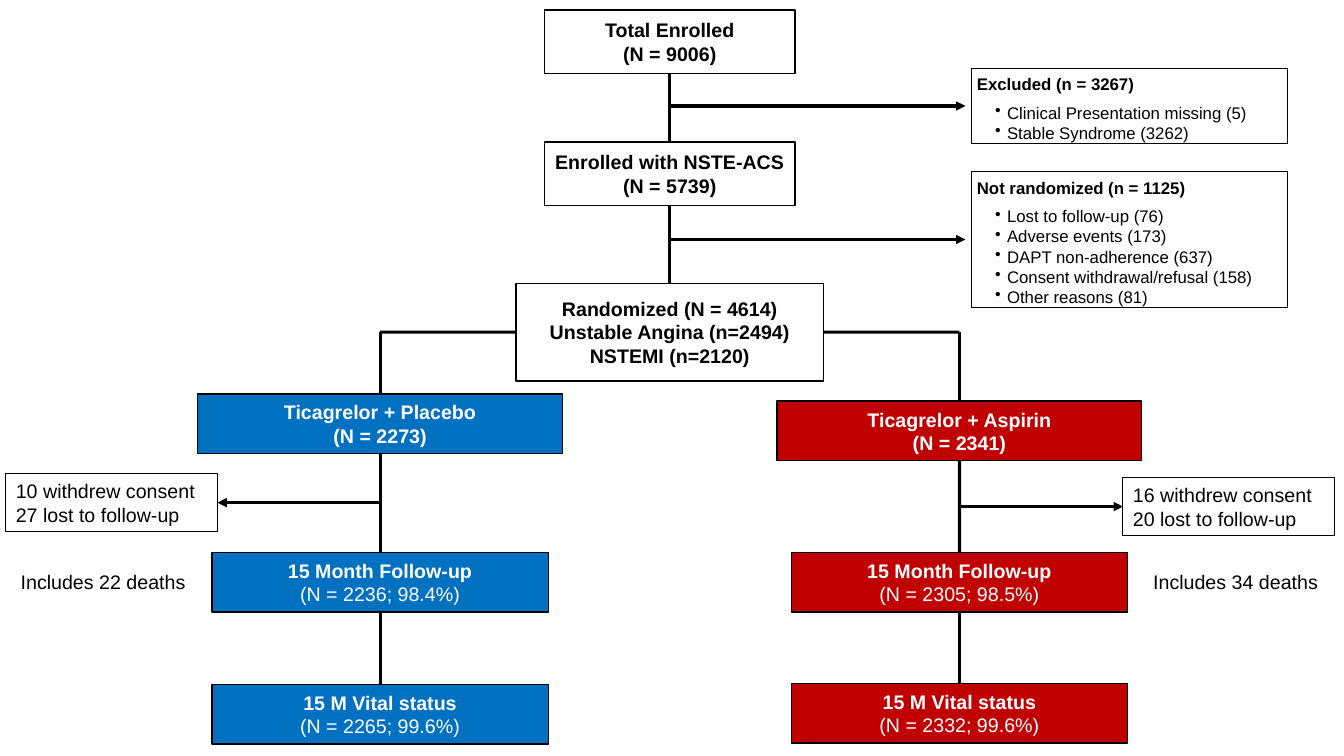
from dataclasses import dataclass
from typing import Optional

from lxml import etree
from pptx import Presentation
from pptx.dml.color import RGBColor
from pptx.enum.shapes import MSO_CONNECTOR, MSO_SHAPE
from pptx.enum.text import MSO_ANCHOR, PP_ALIGN
from pptx.oxml.ns import qn
from pptx.util import Cm, Pt

RECTANGLE = MSO_SHAPE.RECTANGLE
STRAIGHT = MSO_CONNECTOR.STRAIGHT
TOP, MIDDLE = MSO_ANCHOR.TOP, MSO_ANCHOR.MIDDLE
LEFT, CENTER = PP_ALIGN.LEFT, PP_ALIGN.CENTER
SITE_TOP, SITE_LEFT, SITE_BOTTOM, SITE_RIGHT = range(4)


@dataclass(frozen=True)
class Theme:
    font: str = "Arial"
    black: RGBColor = RGBColor(0x00, 0x00, 0x00)
    white: RGBColor = RGBColor(0xFF, 0xFF, 0xFF)
    blue: RGBColor = RGBColor(0x00, 0x70, 0xC0)
    red: RGBColor = RGBColor(0xC0, 0x00, 0x00)
    body_size: float = 14
    list_size: float = 12
    thin_line: float = 0.75
    box_line: float = 1
    flow_line: float = 2.25


THEME = Theme()


@dataclass(frozen=True)
class TextLine:
    text: str
    bold: bool = False
    bullet: bool = False
    space_after: float = 0


@dataclass(frozen=True)
class Box:
    """A text rectangle; lengths in cm, insets as left, top, right, bottom."""
    left: float
    top: float
    width: float
    height: float
    lines: list[TextLine]
    fill: Optional[RGBColor] = None
    color: RGBColor = THEME.black
    line_width: float = THEME.box_line
    size: float = THEME.body_size
    align: PP_ALIGN = CENTER
    anchor: MSO_ANCHOR = MIDDLE
    insets: tuple[float, float, float, float] = (0, 0.13, 0, 0.13)

    @property
    def middle(self) -> float:
        return self.top + self.height / 2


@dataclass(frozen=True)
class Arm:
    center: float
    color: RGBColor
    site: int
    tops: tuple[float, float, float]
    names: tuple[str, str, str]
    counts: tuple[str, str, str]
    losses: tuple[str, str]
    losses_left: float
    losses_top: float
    losses_site: int
    deaths: str
    deaths_left: float


TRUNK = 16.88
TRUNK_STEPS = [
    (0.25, 6.32, 1.6, ["Total Enrolled", "(N = 9006)"]),
    (3.58, 6.32, 1.6, ["Enrolled with NSTE-ACS", "(N = 5739)"]),
    (7.14, 7.75, 2.46, ["Randomized (N = 4614)", "Unstable Angina (n=2494)", "NSTEMI (n=2120)"]),
]
SIDE_LISTS = [
    (1.73, 1.88, "Excluded (n = 3267)",
     ["Clinical Presentation missing (5)", "Stable Syndrome (3262)"]),
    (4.32, 3.43, "Not randomized (n = 1125)",
     ["Lost to follow-up (76)", "Adverse events (173)", "DAPT non-adherence (637)",
      "Consent withdrawal/refusal (158)", "Other reasons (81)"]),
]
STEP_NAMES = ("15 Month Follow-up", "15 M Vital status")
ARM_WIDTHS = (9.19, 8.48, 8.48)
ARMS = [
    Arm(9.58, THEME.blue, SITE_LEFT, (9.93, 13.92, 17.25),
        ("Ticagrelor + Placebo", *STEP_NAMES),
        ("(N = 2273)", "(N = 2236; 98.4%)", "(N = 2265; 99.6%)"),
        ("10 withdrew consent", "27 lost to follow-up"), 0.15, 11.94, SITE_RIGHT,
        "Includes 22 deaths", 0),
    Arm(24.18, THEME.red, SITE_RIGHT, (10.11, 13.92, 17.22),
        ("Ticagrelor + Aspirin", *STEP_NAMES),
        ("(N = 2341)", "(N = 2305; 98.5%)", "(N = 2332; 99.6%)"),
        ("16 withdrew consent", "20 lost to follow-up"), 28.3, 12.04, SITE_LEFT,
        "Includes 34 deaths", 28.54),
]


def set_values(target, values: dict) -> None:
    for name, value in values.items():
        setattr(target, name, value)


def add_bullet(paragraph) -> None:
    properties = paragraph._p.get_or_add_pPr()
    properties.set("marL", str(Cm(0.76)))
    properties.set("indent", str(Cm(-0.3)))
    etree.SubElement(properties, qn("a:buChar")).set("char", "•")


def write_text(frame, box: Box) -> None:
    left, top, right, bottom = box.insets
    set_values(frame, {
        "word_wrap": True, "vertical_anchor": box.anchor,
        "margin_left": Cm(left), "margin_top": Cm(top),
        "margin_right": Cm(right), "margin_bottom": Cm(bottom),
    })
    for index, line in enumerate(box.lines):
        paragraph = frame.add_paragraph() if index else frame.paragraphs[0]
        set_values(paragraph, {"alignment": box.align, "space_after": Pt(line.space_after)})
        if line.bullet:
            add_bullet(paragraph)
        run = paragraph.add_run()
        run.text = line.text
        set_values(run.font, {"name": THEME.font, "size": Pt(box.size), "bold": line.bold})
        run.font.color.rgb = box.color


def draw_box(slide, box: Box):
    shape = slide.shapes.add_shape(
        RECTANGLE, Cm(box.left), Cm(box.top), Cm(box.width), Cm(box.height))
    shape.shadow.inherit = False
    if box.fill is None:
        shape.fill.background()
    else:
        shape.fill.solid()
        shape.fill.fore_color.rgb = box.fill
    shape.line.color.rgb = THEME.black
    shape.line.width = Pt(box.line_width)
    write_text(shape.text_frame, box)
    return shape


def draw_label(slide, box: Box) -> None:
    label = slide.shapes.add_textbox(
        Cm(box.left), Cm(box.top), Cm(box.width), Cm(box.height))
    write_text(label.text_frame, box)


def draw_line(slide, start: tuple[float, float], end: tuple[float, float],
              begin_join=None, end_join=None, arrow: bool = False) -> None:
    """Draw a flow line; each join is a (shape, connection site) pair."""
    connector = slide.shapes.add_connector(STRAIGHT, *(Cm(value) for value in start + end))
    connector.line.color.rgb = THEME.black
    connector.line.width = Pt(THEME.flow_line)
    if arrow:
        etree.SubElement(connector.line._get_or_add_ln(), qn("a:tailEnd")).set("type", "triangle")
    etree.SubElement(connector._element.spPr, qn("a:effectLst"))
    if begin_join:
        connector.begin_connect(*begin_join)
    if end_join:
        connector.end_connect(*end_join)


def draw_chain(slide, center: float, boxes: list[Box]) -> list:
    """Draw boxes from top to bottom, each joined to the next."""
    shapes = [draw_box(slide, box) for box in boxes]
    for index in range(len(boxes) - 1):
        upper, lower = boxes[index:index + 2]
        draw_line(slide, (center, upper.top + upper.height), (center, lower.top),
                  (shapes[index], SITE_BOTTOM), (shapes[index + 1], SITE_TOP))
    return shapes


def draw_side_list(slide, top: float, height: float, title: str, items: list[str]) -> None:
    lines = [TextLine(title, bold=True, space_after=6)]
    lines += [TextLine(item, bullet=True) for item in items]
    box = Box(24.49, top, 7.95, height, lines, line_width=THEME.thin_line,
              size=THEME.list_size, align=LEFT, insets=(0.13, 0.13, 0, 0))
    draw_box(slide, box)
    draw_line(slide, (TRUNK, box.middle), (box.left - 0.16, box.middle), arrow=True)


def draw_arm(slide, arm: Arm, randomized: Box, randomized_shape) -> None:
    boxes = [
        Box(arm.center - width / 2, top, width, 1.5,
            [TextLine(name, bold=True), TextLine(count, bold=index == 0)],
            fill=arm.color, color=THEME.white)
        for index, (width, top, name, count)
        in enumerate(zip(ARM_WIDTHS, arm.tops, arm.names, arm.counts))
    ]
    shapes = draw_chain(slide, arm.center, boxes)
    corner = (arm.center, randomized.middle)
    side = randomized.left + (randomized.width if arm.site == SITE_RIGHT else 0)
    draw_line(slide, (side, randomized.middle), corner, begin_join=(randomized_shape, arm.site))
    draw_line(slide, corner, (arm.center, boxes[0].top), end_join=(shapes[0], SITE_TOP))

    losses = Box(arm.losses_left, arm.losses_top, 5.33, 1.45,
                 [TextLine(text) for text in arm.losses], line_width=THEME.thin_line,
                 align=LEFT, anchor=TOP, insets=(0.25, 0.13, 0, 0.13))
    losses_shape = draw_box(slide, losses)
    draw_line(slide, (arm.center, losses.middle), (losses.left, losses.middle),
              end_join=(losses_shape, arm.losses_site), arrow=True)
    draw_label(slide, Box(arm.deaths_left, 14.22, 5.2, 0.86, [TextLine(arm.deaths)], anchor=TOP))


def main() -> None:
    presentation = Presentation()
    set_values(presentation, {"slide_width": Cm(33.87), "slide_height": Cm(19.05)})
    slide = presentation.slides.add_slide(presentation.slide_layouts[6])
    trunk = [
        Box(TRUNK - width / 2, top, width, height,
            [TextLine(text, bold=True) for text in texts], fill=THEME.white)
        for top, width, height, texts in TRUNK_STEPS
    ]
    trunk_shapes = draw_chain(slide, TRUNK, trunk)
    for side_list in SIDE_LISTS:
        draw_side_list(slide, *side_list)
    for arm in ARMS:
        draw_arm(slide, arm, trunk[-1], trunk_shapes[-1])
    presentation.save("out.pptx")


if __name__ == "__main__":
    main()
